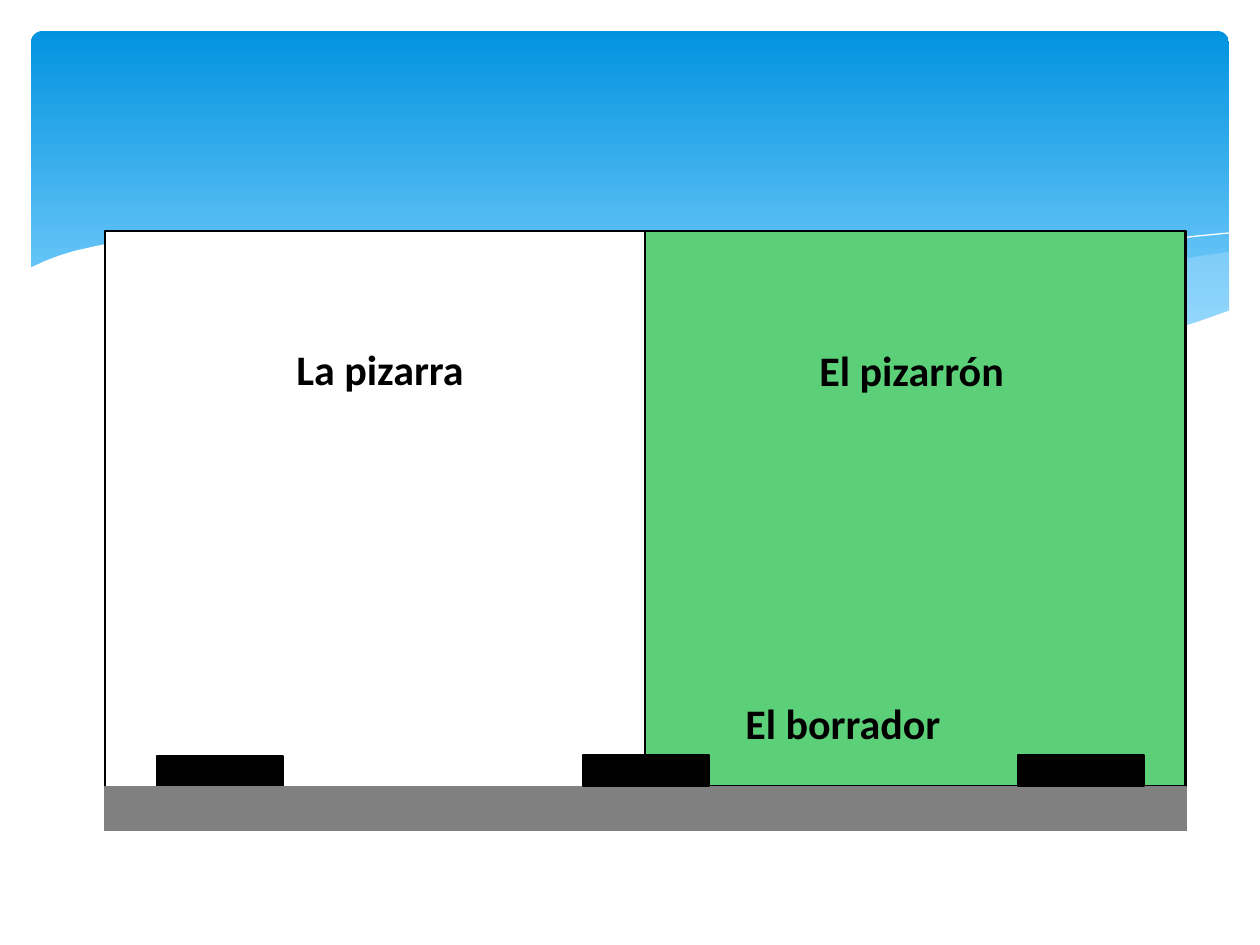
from lxml.etree import SubElement
from pptx import Presentation
from pptx.dml.color import RGBColor
from pptx.enum.shapes import MSO_SHAPE
from pptx.enum.text import MSO_AUTO_SIZE
from pptx.oxml.ns import qn
from pptx.util import Pt

PX = 914400 / 126  # EMU in one px
WIDTH, HEIGHT = 1260, 945

# Header banner: box, corner rounding, gradient stops
BANNER = (31, 31, 1198, 340)
BANNER_ROUNDING = 0.034
BANNER_STOPS = [(0, "0293E0"), (0.9, "83D3FE")]

# Waves over the lower part of the banner
PALE_WAVE = [
    (1229, 252), (1194, 257), (1159, 265), (1123, 272), (1085, 281), (1014, 299),
    (949, 312), (889, 324), (833, 334), (888, 341), (939, 346), (985, 349),
    (1026, 350), (1064, 348), (1099, 345), (1130, 340), (1160, 334), (1187, 326),
    (1213, 318), (1230, 311), (1230, 252),
]
WAVE_LINE = [
    (772, 324), (823, 310), (876, 296), (942, 281), (1016, 265), (1091, 251),
    (1146, 242), (1198, 236), (1229, 233),
]
WHITE_WAVE = [
    (1231, 310), (1197, 322), (1159, 334), (1118, 342), (1071, 347), (1019, 349),
    (959, 347), (892, 341), (816, 330), (730, 315), (633, 294), (563, 277),
    (493, 261), (428, 248), (368, 239), (315, 234), (266, 232), (223, 232),
    (184, 233), (150, 236), (120, 241), (96, 246), (74, 251), (58, 256),
    (45, 261), (32, 267), (29, 268), (29, 415), (1231, 415),
]

# Board parts, back to front
BOARD_LEFT, BOARD_TOP, BOARD_WIDTH, BOARD_HEIGHT = 105, 231, 1081, 599
HALF = BOARD_WIDTH // 2
TRAY_TOP, TRAY_HEIGHT = 787, 43
ERASER_SIZE = (126, 31)
RECTANGLES = [  # box, fill, line
    ((BOARD_LEFT, BOARD_TOP, BOARD_WIDTH, BOARD_HEIGHT), "FFFFFF", "000000"),
    ((157, 756, *ERASER_SIZE), "000000", "000000"),
    ((BOARD_LEFT + HALF, BOARD_TOP, HALF, 555), "5BD078", "000000"),
    ((BOARD_LEFT, TRAY_TOP, BOARD_WIDTH, TRAY_HEIGHT), "808080", "808080"),
    ((1018, 755, *ERASER_SIZE), "000000", "000000"),
    ((583, 755, *ERASER_SIZE), "000000", "000000"),
]
LABELS = [("La pizarra", 284, 337), ("El borrador", 733, 691), ("El pizarrón", 807, 338)]
LABEL_SIZE = (220, 64)


def emu(*lengths):
    return [round(length * PX) for length in lengths]


def color(value):
    return RGBColor.from_string(value)


def style(shape, fill=None, line=None, width=1.25, alpha=None):
    shape.shadow.inherit = False
    if fill:
        shape.fill.solid()
        shape.fill.fore_color.rgb = color(fill)
    else:
        shape.fill.background()
    if alpha is not None:
        fill_color = shape._element.spPr.find(qn("a:solidFill"))[0]
        SubElement(fill_color, qn("a:alpha"), val=str(alpha * 1000))
    if line:
        shape.line.color.rgb = color(line)
        shape.line.width = Pt(width)
    else:
        shape.line.fill.background()


def add_banner(slide):
    banner = slide.shapes.add_shape(MSO_SHAPE.ROUNDED_RECTANGLE, *emu(*BANNER))
    banner.adjustments[0] = BANNER_ROUNDING
    style(banner)
    banner.fill.gradient()
    banner.fill.gradient_angle = 270
    for stop, (position, value) in zip(banner.fill.gradient_stops, BANNER_STOPS):
        stop.position = position
        stop.color.rgb = color(value)


def add_outline(slide, points, close=True, **look):
    builder = slide.shapes.build_freeform(*points[0], scale=PX)
    builder.add_line_segments(points[1:], close=close)
    style(builder.convert_to_shape(), **look)


def add_text(slide, text, box, size=24, font="Calibri", value="000000", bold=True):
    frame = slide.shapes.add_textbox(*emu(*box)).text_frame
    frame.word_wrap = True
    frame.auto_size = MSO_AUTO_SIZE.SHAPE_TO_FIT_TEXT
    run = frame.paragraphs[0].add_run()
    run.text = text
    run.font.size = Pt(size)
    run.font.name = font
    run.font.bold = bold
    run.font.color.rgb = color(value)


def main():
    presentation = Presentation()
    presentation.slide_width, presentation.slide_height = emu(WIDTH, HEIGHT)
    slide = presentation.slides.add_slide(presentation.slide_layouts[6])

    # Header
    add_banner(slide)
    add_outline(slide, PALE_WAVE, fill="C6E7FC", alpha=29)
    add_outline(slide, WAVE_LINE, close=False, line="FFFFFF", width=0)
    add_outline(slide, WHITE_WAVE, fill="FFFFFF")

    # Board, tray and erasers
    for box, fill, line in RECTANGLES:
        shape = slide.shapes.add_shape(MSO_SHAPE.RECTANGLE, *emu(*box))
        style(shape, fill=fill, line=line)

    # Labels
    for text, left, top in LABELS:
        add_text(slide, text, (left, top, *LABEL_SIZE))

    presentation.save("out.pptx")


if __name__ == "__main__":
    main()
